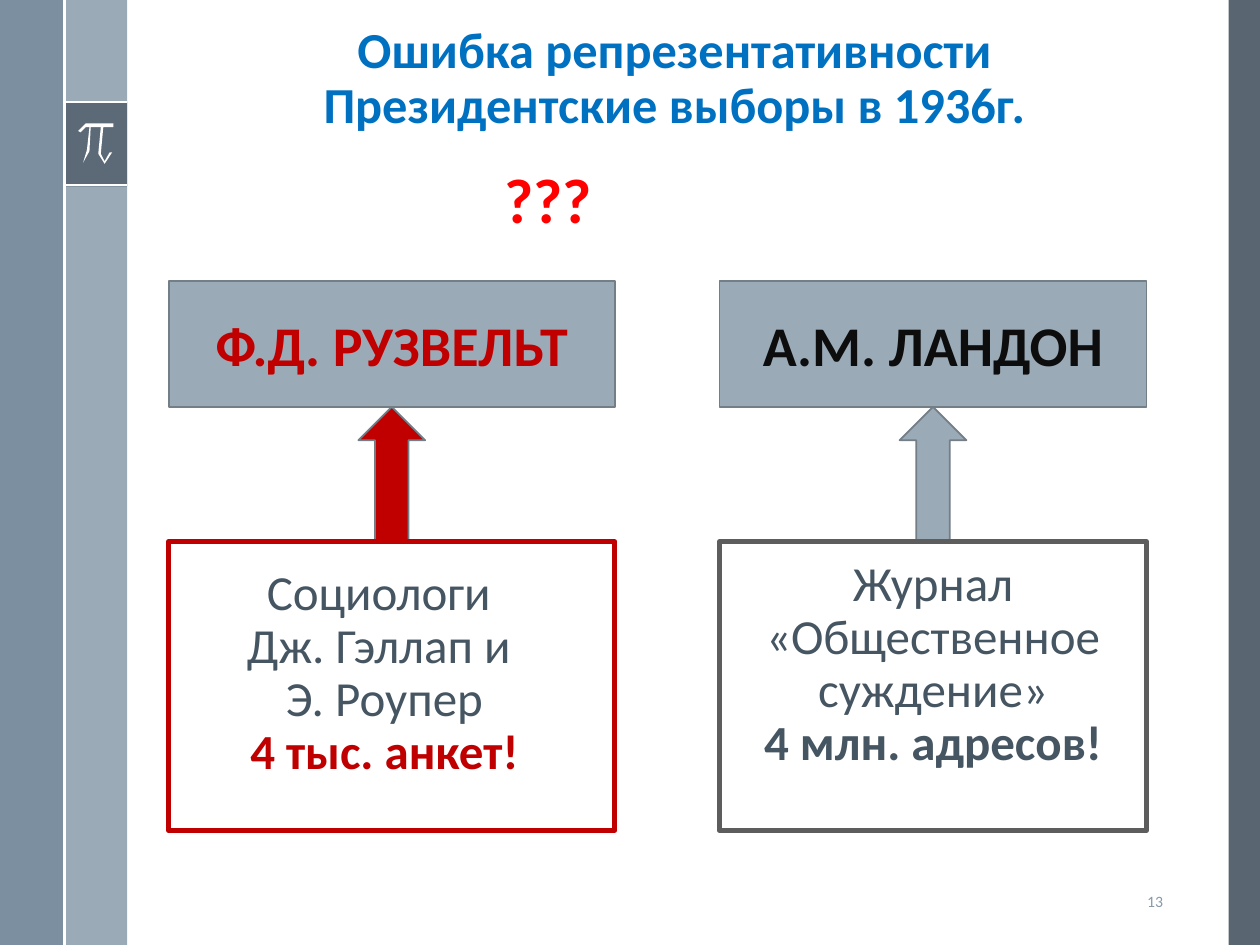
"""Build a slide on sampling error in the 1936 presidential election."""
from lxml.etree import SubElement
from pptx import Presentation
from pptx.dml.color import RGBColor
from pptx.enum.shapes import MSO_CONNECTOR as Connector, MSO_SHAPE as Shape
from pptx.enum.text import MSO_ANCHOR as Anchor, PP_ALIGN as Align
from pptx.oxml.ns import qn
from pptx.util import Inches, Pt


def add_block(kind, place, fill=None, line=None, width=1, opacity=100):
    block = page.shapes.add_shape(kind, *map(Inches, place))
    block.shadow.inherit = False
    if fill:
        block.fill.solid()
        block.fill.fore_color.rgb = RGBColor.from_string(fill)
        if opacity < 100:
            color = block.fill._xPr.find(qn("a:solidFill"))[0]
            SubElement(color, qn("a:alpha"), val=str(opacity * 1000))
    else:
        block.fill.background()
    if line:
        block.line.color.rgb = RGBColor.from_string(line)
        block.line.width = Pt(width)
    else:
        block.line.fill.background()
    return block


def write(box, lines, size, align=Align.CENTER, anchor=Anchor.TOP, spacing=0.9):
    frame = box.text_frame
    frame.word_wrap = True
    frame.vertical_anchor = anchor
    for index, (text, color, bold) in enumerate(lines):
        para = frame.add_paragraph() if index else frame.paragraphs[0]
        para.text = text
        para.alignment = align
        para.line_spacing = spacing
        para.font.name = "Calibri"
        para.font.size = Pt(size)
        para.font.bold = bold
        para.font.color.rgb = RGBColor.from_string(color)


WHITE, STEEL, SLATE, EDGE = "FFFFFF", "9BAAB7", "475562", "737E87"
RED, BLUE, TEXT = "C00000", "0070C0", "465562"

deck = Presentation()
deck.slide_width, deck.slide_height = Inches(10), Inches(7.5)
page = deck.slides.add_slide(deck.slide_layouts[6])

bands = [
    ((9.75, 0, 0.25, 7.5), SLATE, 90),
    ((0.51, 0, 0.5, 7.5), STEEL, 100),
    ((0, 0, 0.5, 7.5), "6A8093", 88),
    ((0.51, 0.81, 0.5, 0.67), SLATE, 75),
]
for place, fill, opacity in bands:
    add_block(Shape.RECTANGLE, place, fill, opacity=opacity)

for ends in [(0.51, 0.81, 1.01, 0.81), (0.51, 1.47, 1.01, 1.47), (0.51, 0, 0.51, 7.5)]:
    rule = page.shapes.add_connector(Connector.STRAIGHT, *map(Inches, ends))
    rule.line.color.rgb = RGBColor.from_string(WHITE)
    rule.line.width = Pt(1.5)
    SubElement(rule._element.spPr, qn("a:effectLst"))

pi_points = [
    (0.9, 0.98), (0.68, 0.98), (0.62, 1.04), (0.64, 1.05), (0.68, 1.01), (0.71, 1.01),
    (0.69, 1.19), (0.66, 1.29), (0.71, 1.2), (0.72, 1.01), (0.8, 1.01), (0.78, 1.22),
    (0.83, 1.3), (0.89, 1.21), (0.87, 1.21), (0.83, 1.28), (0.8, 1.22), (0.82, 1.01),
    (0.9, 1.01),
]
points = [(Inches(x), Inches(y)) for x, y in pi_points]
builder = page.shapes.build_freeform(*points[0])
builder.add_line_segments(points[1:])
pi_sign = builder.convert_to_shape()
pi_sign.shadow.inherit = False
pi_sign.fill.solid()
pi_sign.fill.fore_color.rgb = RGBColor.from_string(WHITE)
pi_sign.line.fill.background()

title = page.shapes.add_textbox(*map(Inches, (1.34, 0.15, 8.03, 1)))
write(title, [("Ошибка репрезентативности", BLUE, True),
              ("Президентские выборы в 1936г.", BLUE, True)], 28.8)
question = page.shapes.add_textbox(*map(Inches, (3.35, 1.29, 2, 0.7)))
write(question, [("???", "FF0000", True)], 36)
number = page.shapes.add_textbox(*map(Inches, (8.83, 6.95, 0.5, 0.4)))
write(number, [("13", "879AAA", False)], 9, Align.RIGHT, Anchor.MIDDLE, 1)

candidates = [
    ("Ф.Д. РУЗВЕЛЬТ", RED, 1.34, 3.54, RED, RED, (1.34, 4.46, 3.42, 1.8),
     [("Социологи ", TEXT, False), ("Дж. Гэллап и ", TEXT, False),
      ("Э. Роупер", TEXT, False), ("4 тыс. анкет!", RED, True)]),
    ("А.М. ЛАНДОН", "0D0D0D", 5.71, 3.39, STEEL, "5D5D5D", (5.79, 4.39, 3.23, 1.8),
     [("Журнал «Общественное суждение»", TEXT, False),
      ("4 млн. адресов!", TEXT, True)]),
]
for name, name_color, left, width, arrow_fill, frame_line, place, lines in candidates:
    header = add_block(Shape.RECTANGLE, (left, 2.23, width, 1), STEEL, EDGE)
    write(header, [(name, name_color, True)], 32, anchor=Anchor.MIDDLE, spacing=1)
    add_block(Shape.UP_ARROW, (left + width / 2 - 0.265, 3.23, 0.53, 1.07), arrow_fill, EDGE)
    add_block(Shape.RECTANGLE, (left, 4.3, width, 2.29), line=frame_line, width=3)
    forecast = page.shapes.add_textbox(*map(Inches, place))
    write(forecast, lines, 28)

deck.save("out.pptx")
